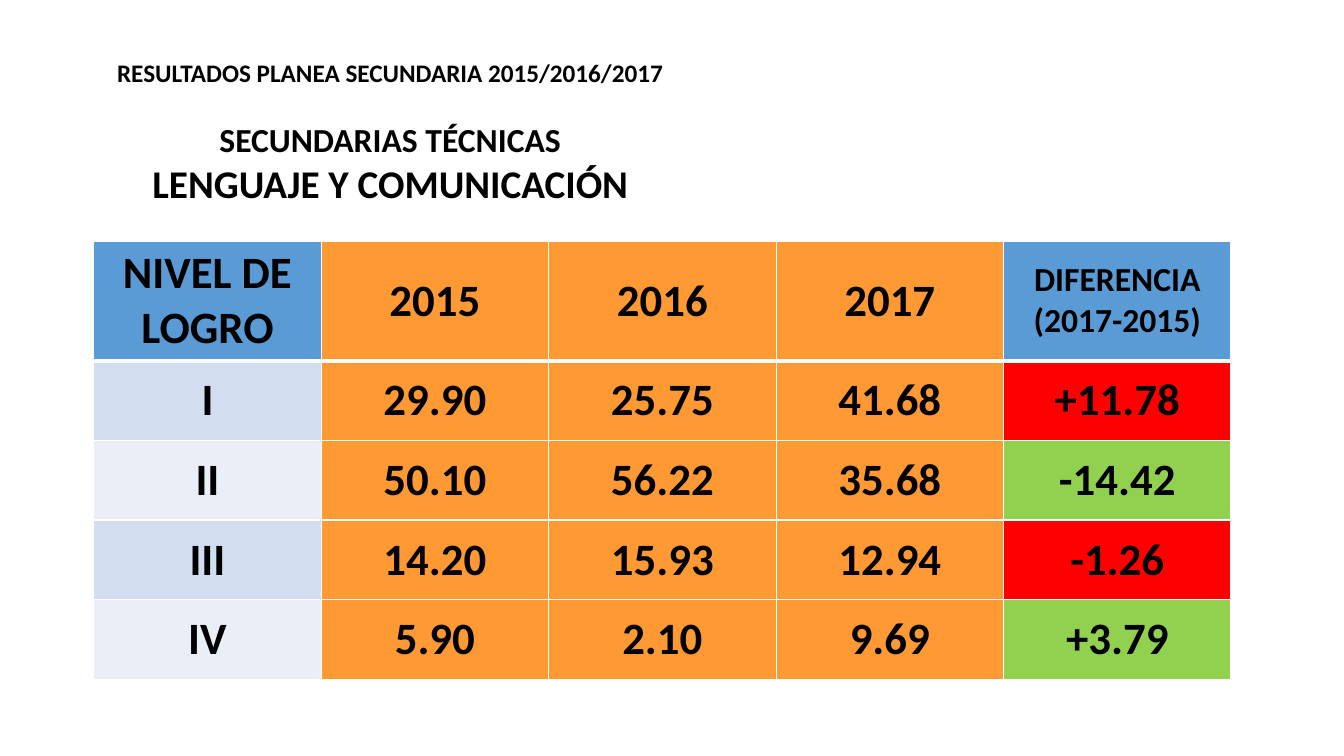
from dataclasses import dataclass

import pptx
import pptx.dml.color
import pptx.enum.text
import pptx.oxml
import pptx.oxml.ns
import pptx.util
from pptx.util import Inches


@dataclass(frozen=True)
class Theme:
    font: str = "Calibri"
    text: str = "000000"
    border: str = "FFFFFF"
    header: str = "5B9BD5"
    bands: tuple = ("D2DEEF", "EAEFF7")
    year: str = "FF9933"
    worse: str = "FF0000"
    better: str = "92D050"
    small: int = 18
    medium: int = 24
    subject: int = 28
    large: int = 32


THEME = Theme()

HEADINGS = [
    ("RESULTADOS PLANEA SECUNDARIA 2015/2016/2017", THEME.small),
    ("SECUNDARIAS TÉCNICAS", THEME.medium),
    ("LENGUAJE Y COMUNICACIÓN", THEME.subject),
]
COLUMNS = ["NIVEL DE LOGRO", "2015", "2016", "2017", "DIFERENCIA\n(2017-2015)"]
LEVELS = [
    (["I", "29.90", "25.75", "41.68", "+11.78"], THEME.worse),
    (["II", "50.10", "56.22", "35.68", "-14.42"], THEME.better),
    (["III", "14.20", "15.93", "12.94", "-1.26"], THEME.worse),
    (["IV", "5.90", "2.10", "9.69", "+3.79"], THEME.better),
]


def rgb(color):
    return pptx.dml.color.RGBColor.from_string(color)


def format_paragraph(para, size):
    para.alignment = pptx.enum.text.PP_ALIGN.CENTER
    para.font.name = THEME.font
    para.font.size = pptx.util.Pt(size)
    para.font.bold = True
    para.font.color.rgb = rgb(THEME.text)


def add_headings(page, left, top, width, height):
    title = page.shapes.title
    title.left, title.top, title.width, title.height = left, top, width, height
    frame = title.text_frame
    frame.word_wrap = True
    frame.auto_size = pptx.enum.text.MSO_AUTO_SIZE.NONE
    frame.vertical_anchor = pptx.enum.text.MSO_ANCHOR.TOP
    frame.text = "\n".join(text for text, size in HEADINGS)
    for para, (text, size) in zip(frame.paragraphs, HEADINGS):
        format_paragraph(para, size)
    frame.paragraphs[1].space_before = pptx.util.Pt(22)


def set_borders(cell, top, bottom):
    """Draw the four cell edges; top and bottom are widths in points."""
    properties = cell._tc.get_or_add_tcPr()
    for side, points in (("L", 1), ("R", 1), ("T", top), ("B", bottom)):
        properties.append(pptx.oxml.parse_xml(
            f'<a:ln{side} {pptx.oxml.ns.nsdecls("a")} w="{pptx.util.Pt(points)}">'
            f'<a:solidFill><a:srgbClr val="{THEME.border}"/></a:solidFill>'
            f'</a:ln{side}>'))


def fill_cell(cell, text, size, color):
    cell.text = text
    cell.vertical_anchor = pptx.enum.text.MSO_ANCHOR.MIDDLE
    cell.fill.solid()
    cell.fill.fore_color.rgb = rgb(color)
    for para in cell.text_frame.paragraphs:
        format_paragraph(para, size)


def add_results(page, left, top, width, height):
    rows = [(COLUMNS, THEME.header, THEME.header)]
    for index, (values, difference) in enumerate(LEVELS):
        rows.append((values, THEME.bands[index % 2], difference))
    last = len(COLUMNS) - 1
    table = page.shapes.add_table(
        len(rows), len(COLUMNS), left, top, width, height).table
    row_height = Inches(0.79)
    for column in table.columns:
        column.width = width // len(COLUMNS)
    for row in table.rows:
        row.height = row_height
    table.rows[0].height = height - row_height * len(LEVELS)

    for r, (values, level_color, difference_color) in enumerate(rows):
        colors = [level_color] + [THEME.year] * (last - 1) + [difference_color]
        for c, (text, color) in enumerate(zip(values, colors)):
            cell = table.cell(r, c)
            set_borders(cell, 3 if r == 1 else 1, 3 if r == 0 else 1)
            size = THEME.medium if (r, c) == (0, last) else THEME.large
            fill_cell(cell, text, size, color)


def main():
    deck = pptx.Presentation()
    deck.slide_width, deck.slide_height = Inches(13.33), Inches(7.5)
    page = deck.slides.add_slide(deck.slide_layouts.get_by_name("Title Only"))
    add_results(page, Inches(0.93), Inches(2.39), Inches(11.28), Inches(4.35))
    add_headings(page, Inches(0.67), Inches(0.52), Inches(6.4), Inches(1.58))
    deck.save("out.pptx")


if __name__ == "__main__":
    main()
